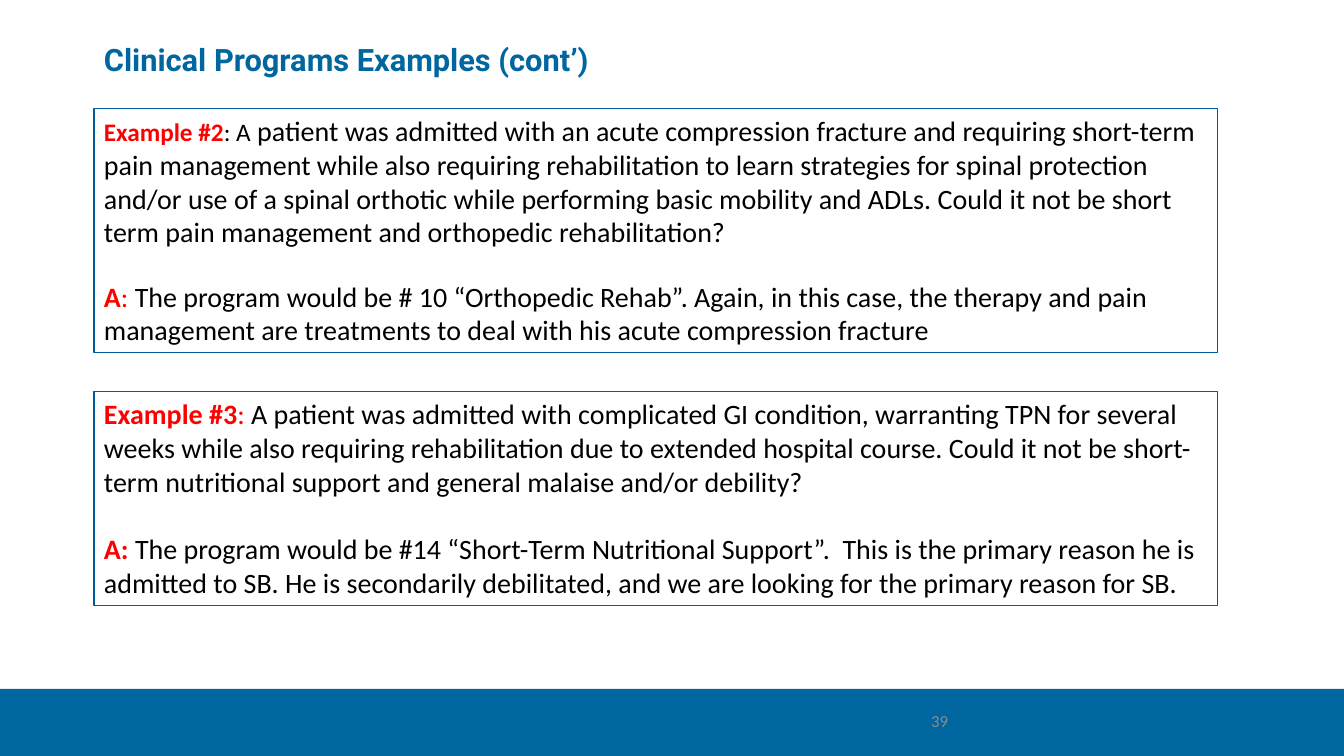
from pptx import Presentation
from pptx import util as u
from pptx.dml.color import RGBColor
from pptx.enum import shapes, text

PX = 914400 / 100.8
WIDE, HIGH = 1344, 756
BLUE, EDGE, RED, BLACK, GREY = "0066A0", "005B99", "FF0000", "000000", "8C8C8C"

CASES = [
    (109, 244, 22, [
        [("Example #2", RED, True, 18), (": A", BLACK, False, 18),
         (" patient was admitted with an acute compression fracture and requiring "
          "short-term pain management while also requiring rehabilitation to learn "
          "strategies for spinal protection and/or use of a spinal orthotic while "
          "performing basic mobility and ADLs. Could it not be short term pain "
          "management and orthopedic rehabilitation?", BLACK, False, 20)],
        [("A", RED, True, 20), (": ", RED, False, 20),
         ("The program would be # 10 “Orthopedic Rehab”. Again, in this case, the "
          "therapy and pain management are treatments to deal with his acute "
          "compression fracture", BLACK, False, 20)],
    ]),
    (392, 214, 24, [
        [("Example #3", RED, True, 20), (": ", RED, False, 20),
         ("A patient was admitted with complicated GI condition, warranting TPN for "
          "several weeks while also requiring rehabilitation due to extended hospital "
          "course. Could it not be short-term nutritional support and general malaise "
          "and/or debility?", BLACK, False, 20)],
        [("A: ", RED, True, 20),
         ("The program would be #14 “Short-Term Nutritional Support”.  This is the "
          "primary reason he is admitted to SB. He is secondarily debilitated, and we "
          "are looking for the primary reason for SB.", BLACK, False, 20)],
    ]),
]


def px(n):
    return u.Emu(round(n * PX))


def color(code):
    return RGBColor.from_string(code)


def write(para, words, size=20, hue=BLACK, bold=False, face="Calibri"):
    run = para.add_run()
    run.text = words
    run.font.size = u.Pt(size)
    run.font.name = face
    run.font.bold = bold
    run.font.color.rgb = color(hue)


def rect(slide, box, fill=None, line=None):
    part = slide.shapes.add_shape(shapes.MSO_SHAPE.RECTANGLE, *map(px, box))
    part.shadow.inherit = False
    if fill:
        part.fill.solid()
        part.fill.fore_color.rgb = color(fill)
    else:
        part.fill.background()
    if line:
        part.line.color.rgb = color(line)
        part.line.width = u.Pt(0.75)
    else:
        part.line.fill.background()
    return part


def label(slide, box):
    frame = slide.shapes.add_textbox(*map(px, box)).text_frame
    frame.word_wrap = True
    frame.vertical_anchor = text.MSO_ANCHOR.MIDDLE
    return frame.paragraphs[0]


def title(slide, box):
    para = label(slide, box)
    para.line_spacing = 0.9
    write(para, "Clinical Programs Examples (cont’)", size=22, hue=BLUE,
          bold=True, face="Roboto")


def case(slide, box, gap, paras):
    frame = rect(slide, box, line=EDGE).text_frame
    frame.word_wrap = True
    frame.vertical_anchor = text.MSO_ANCHOR.TOP
    for i, runs in enumerate(paras):
        para = frame.add_paragraph() if i else frame.paragraphs[0]
        para.alignment = text.PP_ALIGN.LEFT
        if i:
            para.space_before = u.Pt(gap)
        for words, hue, bold, size in runs:
            write(para, words, size=size, hue=hue, bold=bold)


def footer(slide, box):
    left, top, _, _ = box
    rect(slide, box, fill=BLUE)
    para = label(slide, (left + 723, top + 12, 235, 40))
    para.alignment = text.PP_ALIGN.RIGHT
    write(para, "39", size=12, hue=GREY)


def main():
    deck = Presentation()
    deck.slide_width, deck.slide_height = px(WIDE), px(HIGH)
    slide = deck.slides.add_slide(deck.slide_layouts[6])
    # Footer band with page number
    footer(slide, (0, 689, WIDE, HIGH - 689))
    # Question and answer boxes
    for top, high, gap, paras in CASES:
        case(slide, (94, top, 1124, high), gap, paras)
    # Heading
    title(slide, (94, 28, 924, 68))
    deck.save("out.pptx")


if __name__ == "__main__":
    main()
